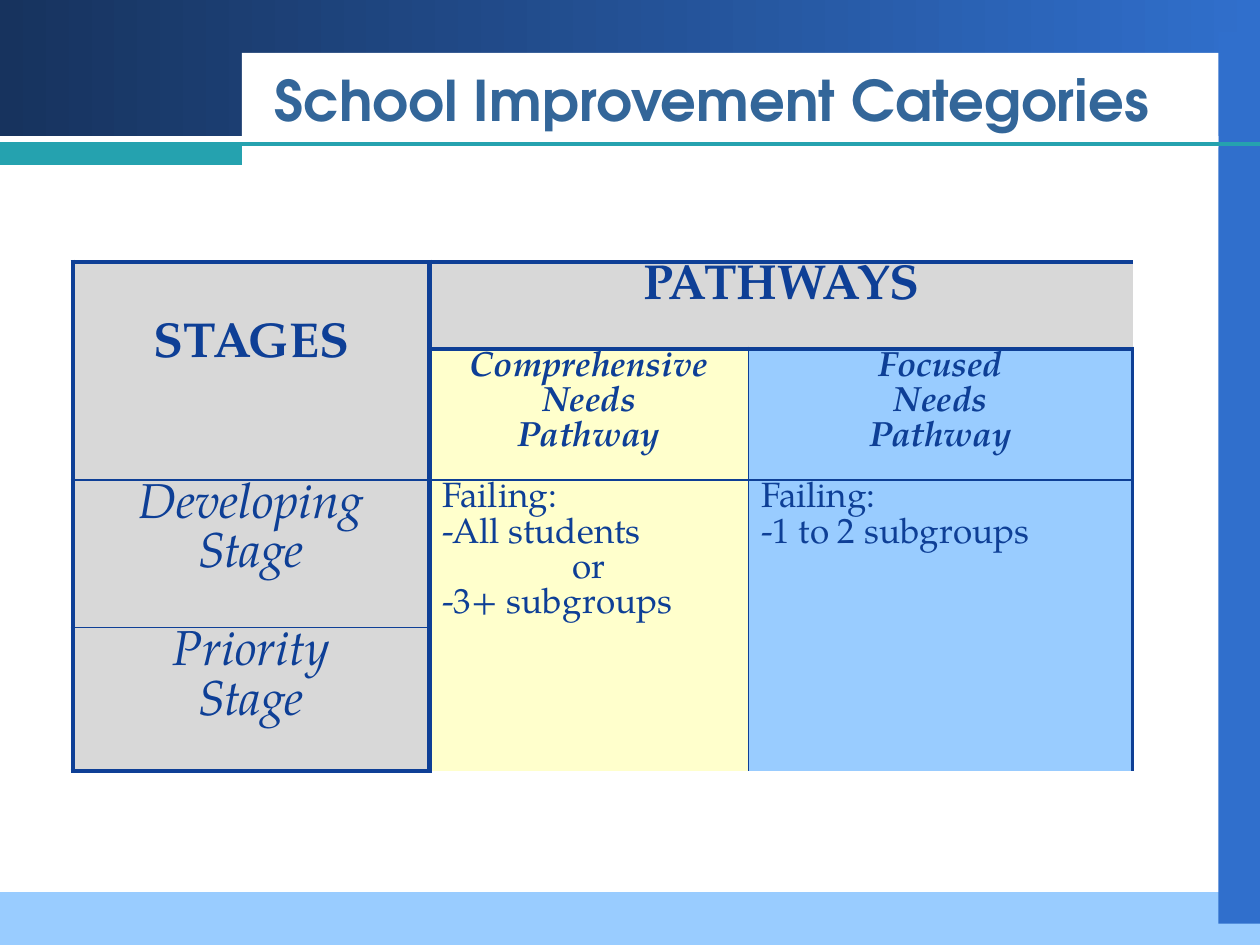
from lxml import etree
from pptx import Presentation
from pptx.dml.color import RGBColor
from pptx.enum.shapes import MSO_CONNECTOR, MSO_SHAPE
from pptx.enum.text import MSO_ANCHOR, PP_ALIGN
from pptx.oxml.ns import qn
from pptx.util import Inches, Pt

NAVY, TEAL, BLUE, SKY = "0E3F96", "25A2AF", "306FCC", "99CCFF"
GRAY, CREAM = "D8D8D8", "FFFFCC"
SERIF, SANS = "TeX Gyre Pagella", "TeX Gyre Adventor"
COL_WIDTHS = [2.83, 2.53, 3.05]
ROW_HEIGHTS = [0.69, 1.04, 1.17, 1.14]
COL_RULES = [3, 3, 1, 2.25]
STAGE_RULES = [3, 3, 1, 1, 3]
PATHWAY_RULES = [3, 3, 1, 1, 2.25]


def rgb(value):
    """Return the colour for a hex string."""
    return RGBColor.from_string(value)


def write(tf, text, size=20, font=SERIF, color=NAVY, bold=False, italic=False,
          align=PP_ALIGN.LEFT, centered=()):
    """Write one paragraph per line of text, centring the listed lines."""
    tf.word_wrap = True
    for i, line in enumerate(text.split("\n")):
        p = tf.paragraphs[0] if i == 0 else tf.add_paragraph()
        p.alignment = PP_ALIGN.CENTER if line in centered else align
        r = p.add_run()
        r.text = line
        r.font.name, r.font.size = font, Pt(size)
        r.font.bold, r.font.italic = bold, italic
        r.font.color.rgb = rgb(color)


def add_rect(s, left, top, width, height, color, end_color=None):
    """Add a borderless rectangle, blended to end_color when given."""
    sp = s.shapes.add_shape(MSO_SHAPE.RECTANGLE, Inches(left), Inches(top),
                            Inches(width), Inches(height))
    sp.shadow.inherit = False
    sp.line.fill.background()
    if end_color:
        sp.fill.gradient()
        sp.fill.gradient_angle = 0
        for stop, value in zip(sp.fill.gradient_stops, (color, end_color)):
            stop.color.rgb = rgb(value)
    else:
        sp.fill.solid()
        sp.fill.fore_color.rgb = rgb(color)


def add_frame(s, width, height):
    """Draw the coloured bands around the slide."""
    tab, side, rule = 1.92, 0.33, 1.14
    add_rect(s, 0, 0, width, 1.08, "17335E", BLUE)
    add_rect(s, 0, height - 0.42, width, 0.42, SKY)
    add_rect(s, width - side, 0.25, side, 7.08, BLUE)
    add_rect(s, tab, 0.42, width - side - tab, 0.75, "FFFFFF")
    line = s.shapes.add_connector(MSO_CONNECTOR.STRAIGHT, 0, Inches(rule),
                                  Inches(width), Inches(rule))
    line.line.color.rgb, line.line.width = rgb(TEAL), Pt(2.25)
    etree.SubElement(line._element.spPr, qn("a:effectLst"))
    add_rect(s, 0, rule, tab, 0.17, TEAL)


def add_title(s, left, top, width, height):
    """Add the slide title."""
    sp = s.shapes.add_textbox(Inches(left), Inches(top), Inches(width), Inches(height))
    sp.text_frame.vertical_anchor = MSO_ANCHOR.MIDDLE
    write(sp.text_frame, "School Improvement Categories", size=32, font=SANS,
          color="336699", bold=True)


def set_borders(cell, widths):
    """Set left, right, top and bottom borders, where 0 means none."""
    tcPr = cell._tc.get_or_add_tcPr()
    for i, (side, width) in enumerate(zip("LRTB", widths)):
        ln = etree.Element(qn(f"a:ln{side}"), w=str(Pt(width)))
        if width:
            fill = etree.SubElement(ln, qn("a:solidFill"))
            etree.SubElement(fill, qn("a:srgbClr"), val=NAVY)
        else:
            etree.SubElement(ln, qn("a:noFill"))
        tcPr.insert(i, ln)


def fill_block(table, row, col, rows, cols, color, text, margin_top=0.02, **fmt):
    """Fill a block of cells, merging it when it spans more than one."""
    rules = PATHWAY_RULES if col else STAGE_RULES
    last_row, last_col = row + rows, col + cols
    origin = table.cell(row, col)
    if rows * cols > 1:
        origin.merge(table.cell(last_row - 1, last_col - 1))
    for r in range(row, last_row):
        for c in range(col, last_col):
            cell = table.cell(r, c)
            cell.fill.solid()
            cell.fill.fore_color.rgb = rgb(color)
            cell.margin_top = cell.margin_bottom = Inches(0.02)
            set_borders(cell, (COL_RULES[c] if c == col else 0,
                               COL_RULES[c + 1] if c + 1 == last_col else 0,
                               rules[r] if r == row else 0,
                               rules[r + 1] if r + 1 == last_row else 0))
    origin.margin_top = Inches(margin_top)
    write(origin.text_frame, text, **fmt)


def add_pathways_table(s, left, top):
    """Add the table of stages and pathways."""
    table = s.shapes.add_table(len(ROW_HEIGHTS), len(COL_WIDTHS), Inches(left), Inches(top),
                               Inches(sum(COL_WIDTHS)), Inches(sum(ROW_HEIGHTS))).table
    table.first_row = table.horz_banding = False
    for column, width in zip(table.columns, COL_WIDTHS):
        column.width = Inches(width)
    for row, height in zip(table.rows, ROW_HEIGHTS):
        row.height = Inches(height)
    head = dict(size=28, bold=True, align=PP_ALIGN.CENTER)
    stage = dict(size=28, italic=True, align=PP_ALIGN.CENTER)
    pathway = dict(bold=True, italic=True, align=PP_ALIGN.CENTER)
    fill_block(table, 0, 0, 2, 1, GRAY, "STAGES", margin_top=0.48, **head)
    fill_block(table, 0, 1, 1, 2, GRAY, "PATHWAYS", **head)
    fill_block(table, 1, 1, 1, 1, CREAM, "Comprehensive\nNeeds\nPathway", **pathway)
    fill_block(table, 1, 2, 1, 1, SKY, "Focused\nNeeds\nPathway", **pathway)
    fill_block(table, 2, 0, 1, 1, GRAY, "Developing\nStage", **stage)
    fill_block(table, 3, 0, 1, 1, GRAY, "Priority\nStage", **stage)
    fill_block(table, 2, 1, 2, 1, CREAM, "Failing:\n-All students\nor\n-3+ subgroups",
               centered=("or",))
    fill_block(table, 2, 2, 2, 1, SKY, "Failing:\n-1 to 2 subgroups")


def main():
    """Build and save the slide."""
    prs = Presentation()
    prs.slide_width, prs.slide_height = Inches(10), Inches(7.5)
    s = prs.slides.add_slide(prs.slide_layouts[6])
    add_frame(s, 10, 7.5)
    add_title(s, 2.08, 0.5, 7.5, 0.58)
    add_pathways_table(s, 0.58, 2.08)
    prs.save("out.pptx")


if __name__ == "__main__":
    main()
